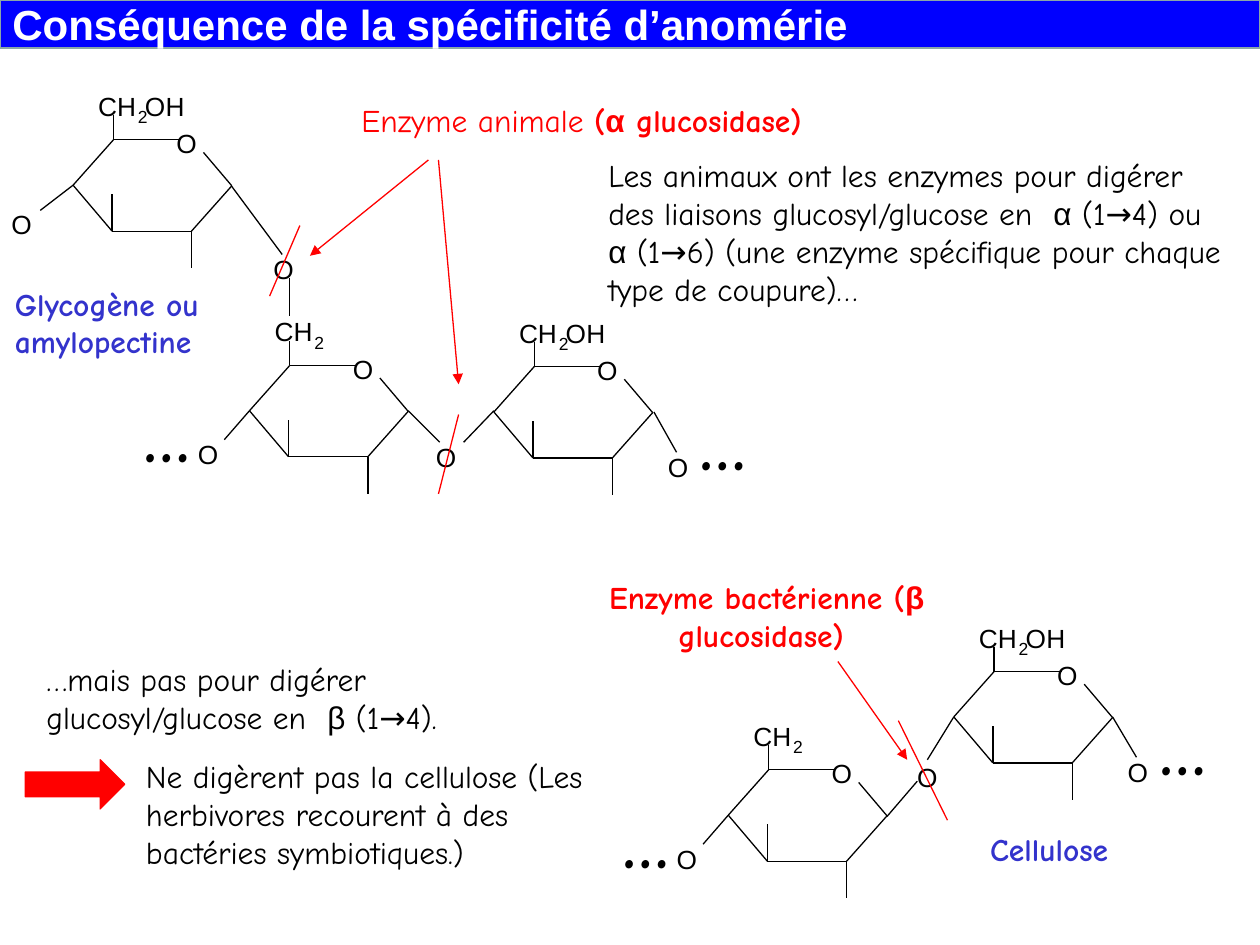
from pptx import Presentation
from pptx.dml.color import RGBColor
from pptx.enum.shapes import MSO_CONNECTOR as Link, MSO_SHAPE as Preset
from pptx.enum.text import MSO_ANCHOR as Anchor, MSO_AUTO_SIZE as Fit, PP_ALIGN as Align
from pptx.oxml.ns import qn
from pptx.util import Inches, Pt
from lxml.etree import SubElement

BLACK, WHITE, RED, BLUE, VIOLET = "000000", "FFFFFF", "FF0000", "0000FF", "3333CC"
EDGE = "8AA6A8"
SANS, HAND = "Arial", "Comic Neue"
COLUMNS, ROWS = 100, 75


def color(code):
    return RGBColor.from_string(code)


class Board:
    """Draws on one slide; all lengths are columns and rows of the grid."""

    def __init__(self, deck):
        self.slide = deck.slides.add_slide(deck.slide_layouts[6])
        self.shapes = self.slide.shapes
        self.column = deck.slide_width / COLUMNS
        self.row = deck.slide_height / ROWS

    def cells(self, *lengths):
        units = (self.column, self.row) * 2
        return [round(n * unit) for n, unit in zip(lengths, units)]

    def line(self, start, end, ink=BLACK, arrow=False):
        link = self.shapes.add_connector(Link.STRAIGHT, *self.cells(*start, *end))
        link.line.color.rgb = color(ink)
        link.line.width = Pt(0.75)
        props = link._element.spPr
        if arrow:
            SubElement(props.find(qn("a:ln")), qn("a:tailEnd"), type="triangle")
        SubElement(props, qn("a:effectLst"))

    def add_runs(self, paragraph, runs, size, ink):
        for words, face, bold in runs:
            run = paragraph.add_run()
            run.text = words
            run.font.name, run.font.size, run.font.bold = face, Pt(size), bold
            run.font.color.rgb = color(ink)

    def text(self, at, runs, ink=BLACK, size=18, align=Align.LEFT):
        frame = self.shapes.add_textbox(*self.cells(*at)).text_frame
        frame.word_wrap = True
        frame.auto_size = Fit.SHAPE_TO_FIT_TEXT
        frame.paragraphs[0].alignment = align
        self.add_runs(frame.paragraphs[0], runs, size, ink)

    def atom(self, letter, x, y):
        width, height, size = (0.8, 1.7, 10) if letter == "2" else (1.6, 2.5, 15)
        frame = self.shapes.add_textbox(*self.cells(x, y, width, height)).text_frame
        frame.margin_left = frame.margin_right = frame.margin_top = frame.margin_bottom = 0
        frame.word_wrap = False
        frame.auto_size = Fit.SHAPE_TO_FIT_TEXT
        self.add_runs(frame.paragraphs[0], [(letter, SANS, False)], size, BLACK)

    def shape(self, preset, at, fill, edge, width):
        shape = self.shapes.add_shape(preset, *self.cells(*at))
        shape.shadow.inherit = False
        shape.fill.solid()
        shape.fill.fore_color.rgb = color(fill)
        shape.line.color.rgb = color(edge)
        shape.line.width = Pt(width)
        return shape

    def glucose(self, x, y, hydroxyl):
        """Ring whose upper left corner is at x, y."""
        for start, end in RING_BONDS:
            self.line((x + start[0], y + start[1]), (x + end[0], y + end[1]))
        for letter, dx, dy in RING_ATOMS + (HYDROXYL if hydroxyl else []):
            self.atom(letter, x + dx, y + dy)

    def dots(self, x, y):
        self.text((x, y, 7.1, 7.7), [("…", HAND, True)], size=40)


# One sugar ring, relative to its upper left corner
TOP, LEFT, RIGHT = (0, 0), (-3.2, 3.6), (9.4, 3.65)
LOW_LEFT, LOW_RIGHT = (-0.1, 7.25), (6.2, 7.25)
RING_BONDS = [
    (TOP, LEFT), (TOP, (5.35, 0)), (LEFT, LOW_LEFT), (LOW_LEFT, LOW_RIGHT),
    (LOW_RIGHT, RIGHT), (RIGHT, (7.15, 1)), (LOW_RIGHT, (6.2, 10.2)),
    (LOW_LEFT, (-0.1, 4.3)), (TOP, (0, -1.95)),
]
RING_ATOMS = [("O", 5, -1), ("C", -1.2, -3.95), ("H", 0.3, -3.95), ("2", 1.95, -2.65)]
HYDROXYL = [("O", 2.5, -3.95), ("H", 4.15, -3.95)]

RINGS = [  # x, y, with hydroxyl group
    (9, 11.1, True), (23, 29, False), (42.4, 29.1, True),
    (61, 61.1, False), (78.9, 53.3, True),
]
OXYGENS = [
    (0.9, 16.5), (21.7, 20.1), (15.7, 34.8), (34.6, 35), (53, 35.8),
    (53.7, 66.9), (72.8, 60.4), (89.5, 60),
]
LINKS = [
    ((5.8, 14.7), (3.2, 16.7)), ((18.4, 14.8), (22.4, 20.2)), ((23, 22.1), (23, 25.1)),
    ((19.8, 32.6), (17.8, 34.9)), ((32.4, 32.6), (34.9, 35.1)), ((39.2, 32.6), (36.8, 35.1)),
    ((51.9, 32.7), (53.7, 35.9)), ((57.8, 64.7), (55.8, 67)), ((70.4, 64.8), (72.8, 62)),
    ((75.7, 56.9), (73.6, 60.3)), ((88.3, 56.9), (90.2, 60.1)),
]
CHAIN_ENDS = [(10.4, 30.7), (54.5, 31.3), (48.4, 62.9), (91, 55.5)]
CUTS = [((36.4, 32.9), (34.8, 39.2)), ((23.8, 17.9), (21.4, 23.5)), ((71.3, 57.2), (75.2, 65.1))]
ENZYME_ARROWS = [
    ((34.8, 12.7), (36.4, 30.5)), ((34, 12.7), (24.6, 20.3)), ((66.5, 52.5), (72, 60.3)),
]


def main():
    deck = Presentation()
    deck.slide_width, deck.slide_height = Inches(10), Inches(7.5)
    board = Board(deck)

    # Molecules
    for ring in RINGS:
        board.glucose(*ring)
    for x, y in OXYGENS:
        board.atom("O", x, y)
    for start, end in LINKS:
        board.line(start, end)
    for x, y in CHAIN_ENDS:
        board.dots(x, y)

    # Where the enzymes cut
    for start, end in CUTS:
        board.line(start, end, RED)
    for start, end in ENZYME_ARROWS:
        board.line(start, end, RED, arrow=True)

    # Names of enzymes and sugars
    board.text((27.7, 7.5, 43.3, 4.3), [
        ("Enzyme animale ", HAND, False), ("(", HAND, True),
        ("α", SANS, True), (" glucosidase)", HAND, True)], RED)
    board.text((44.9, 45.4, 31.9, 7.7), [
        ("Enzyme bactérienne (", HAND, True), ("β", SANS, True),
        (" glucosidase) ", HAND, True)], RED, align=Align.CENTER)
    board.text((0.2, 22.1, 19.7, 7.7), [("Glycogène ou amylopectine", HAND, True)], VIOLET)
    board.text((77.6, 65.4, 19.7, 4.3), [("Cellulose", HAND, True)], VIOLET)

    # Explanations
    board.text((47.3, 11.9, 51.3, 14), [
        ("Les animaux ont les enzymes pour digérer des liaisons glucosyl/glucose en  ", HAND, False),
        ("α", SANS, False), (" (1→4) ou ", HAND, False), ("α", SANS, False),
        (" (1→6) (une enzyme spécifique pour chaque type de coupure)…", HAND, False)])
    board.text((2.7, 51.9, 40.2, 7.7), [
        ("…mais pas pour digérer glucosyl/glucose en  ", HAND, False),
        ("β", SANS, False), (" (1→4).", HAND, False)])
    board.text((10.6, 59.6, 40.2, 11), [
        ("Ne digèrent pas la cellulose (Les herbivores recourent à des bactéries symbiotiques.)",
         HAND, False)])
    board.shape(Preset.RIGHT_ARROW, (2, 60.3, 7.9, 3.9), RED, RED, 0.75)

    # Title bar
    title = board.shape(Preset.RECTANGLE, (0, 0, COLUMNS, 3.8), BLUE, EDGE, 1).text_frame
    title.vertical_anchor = Anchor.MIDDLE
    title.paragraphs[0].alignment = Align.LEFT
    board.add_runs(title.paragraphs[0],
                   [("Conséquence de la spécificité d’anomérie", SANS, True)], 24, WHITE)

    deck.save("out.pptx")


if __name__ == "__main__":
    main()
